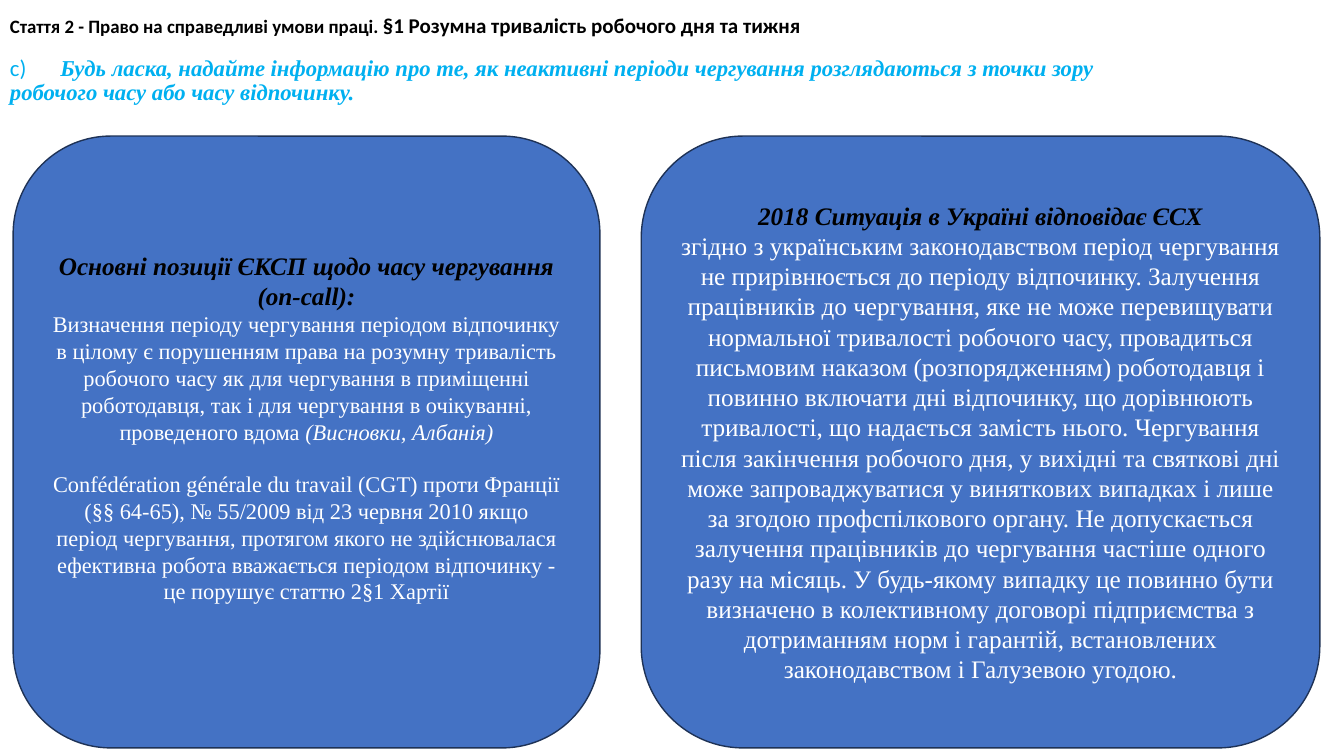
from dataclasses import dataclass

from pptx import Presentation
from pptx import util as u
from pptx.dml.color import RGBColor
from pptx.enum import shapes, text


@dataclass(frozen=True)
class Theme:
    sans: str = "Calibri"
    serif: str = "Times New Roman"
    ink: str = "000000"
    paper: str = "FFFFFF"
    accent: str = "00B0F0"
    card: str = "4472C4"
    card_edge: str = "1E3256"
    article: float = 13.5
    clause: float = 15
    question: float = 16.2
    heading: float = 18
    body: float = 16


@dataclass(frozen=True)
class Area:
    """Shares of the slide's width and height, in percent."""
    left: float
    top: float
    width: float
    height: float


@dataclass(frozen=True)
class Span:
    text: str
    size: float
    color: str
    font: str
    bold: bool = False
    italic: bool = False


@dataclass(frozen=True)
class Para:
    spans: tuple[Span, ...]
    space_before: float = 0


@dataclass(frozen=True)
class Headline:
    area: Area
    spans: tuple[Span, ...]
    line_spacing: float
    inset_top: float


@dataclass(frozen=True)
class Card:
    area: Area
    paras: tuple[Para, ...]
    inset_bottom: float = 0.05


THEME = Theme()
SLIDE_WIDTH, SLIDE_HEIGHT = u.Inches(13.33), u.Inches(7.5)
CARD_TOP, CARD_HEIGHT = 18, 80.93


def heading(words: str) -> Para:
    return Para((Span(words, THEME.heading, THEME.ink, THEME.serif, True, True),))


def body(words: str, size: float = THEME.body, italic: bool = False) -> Span:
    return Span(words, size, THEME.paper, THEME.serif, italic=italic)


HEADLINES = (
    Headline(Area(0, 7.47, 86.27, 8.53), (
        Span("c)\t", THEME.question, THEME.accent, THEME.sans),
        Span("Будь ласка, надайте інформацію про те, як неактивні періоди чергування "
             "розглядаються з точки зору робочого часу або часу відпочинку.",
             THEME.question, THEME.accent, THEME.serif, True, True),
    ), line_spacing=0.9, inset_top=0),
    Headline(Area(0, 0, 71.94, 8.53), (
        Span("Стаття 2 - Право на справедливі умови праці. ",
             THEME.article, THEME.ink, THEME.sans, True),
        Span("§1 Розумна тривалість робочого дня та тижня",
             THEME.clause, THEME.ink, THEME.sans, True),
    ), line_spacing=0.7, inset_top=0.19),
)

CARDS = (
    Card(Area(0.98, CARD_TOP, 43.66, CARD_HEIGHT), (
        heading("Основні позиції ЄКСП щодо часу чергування (on-call):"),
        Para((
            body("Визначення періоду чергування періодом відпочинку в цілому є "
                 "порушенням права на розумну тривалість робочого часу як для "
                 "чергування в приміщенні роботодавця, так і для чергування в "
                 "очікуванні, проведеного вдома "),
            body("(Висновки, Албанія)", italic=True),
        )),
        Para((
            body("Confédération générale du travail (CGT) проти Франції (§§ 64-65), "
                 "№ 55/2009 від 23 червня 2010 якщо період чергування, протягом якого "
                 "не здійснювалася ефективна робота вважається періодом відпочинку - "
                 "це порушує статтю 2§1 Хартії"),
        ), space_before=18),
    ), inset_bottom=0.34),
    Card(Area(47.71, CARD_TOP, 50.49, CARD_HEIGHT), (
        heading("2018 Ситуація в Україні відповідає ЄСХ"),
        Para((
            body("згідно з українським законодавством період чергування не "
                 "прирівнюється до періоду відпочинку. Залучення працівників до "
                 "чергування, яке не може перевищувати нормальної тривалості робочого "
                 "часу, провадиться письмовим наказом (розпорядженням) роботодавця і "
                 "повинно включати дні відпочинку, що дорівнюють тривалості, що "
                 "надається замість нього. Чергування після закінчення робочого дня, у "
                 "вихідні та святкові дні може запроваджуватися у виняткових випадках і "
                 "лише за згодою профспілкового органу. Не допускається залучення "
                 "працівників до чергування частіше одного разу на місяць. У будь-якому "
                 "випадку це повинно бути визначено в колективному договорі підприємства "
                 "з дотриманням норм і гарантій, встановлених законодавством і Галузевою "
                 "угодою.", size=THEME.heading),
        )),
    )),
)


def place(area: Area) -> tuple[int, int, int, int]:
    """Turn percent shares into left, top, width and height."""
    return (int(SLIDE_WIDTH * area.left / 100), int(SLIDE_HEIGHT * area.top / 100),
            int(SLIDE_WIDTH * area.width / 100), int(SLIDE_HEIGHT * area.height / 100))


def add_text(para, words: str, *, size: float, color: str, font: str,
             bold: bool = False, italic: bool = False) -> None:
    span = para.add_run()
    span.text = words
    span.font.size = u.Pt(size)
    span.font.name = font
    span.font.bold = bold
    span.font.italic = italic
    span.font.color.rgb = RGBColor.from_string(color)


def add_spans(para, spans: tuple[Span, ...]) -> None:
    for span in spans:
        add_text(para, span.text, size=span.size, color=span.color, font=span.font,
                 bold=span.bold, italic=span.italic)


def draw_headline(page, headline: Headline) -> None:
    frame = page.shapes.add_textbox(*place(headline.area)).text_frame
    frame.word_wrap = True
    frame.vertical_anchor = text.MSO_ANCHOR.TOP
    frame.margin_top = u.Inches(headline.inset_top)
    para = frame.paragraphs[0]
    para.line_spacing = headline.line_spacing
    add_spans(para, headline.spans)


def draw_card(page, card: Card) -> None:
    box = page.shapes.add_shape(shapes.MSO_SHAPE.ROUNDED_RECTANGLE, *place(card.area))
    box.shadow.inherit = False
    box.fill.solid()
    box.fill.fore_color.rgb = RGBColor.from_string(THEME.card)
    box.line.color.rgb = RGBColor.from_string(THEME.card_edge)
    box.line.width = u.Pt(1)
    frame = box.text_frame
    frame.word_wrap = True
    frame.vertical_anchor = text.MSO_ANCHOR.MIDDLE
    frame.margin_bottom = u.Inches(card.inset_bottom)
    for index, content in enumerate(card.paras):
        para = frame.add_paragraph() if index else frame.paragraphs[0]
        para.alignment = text.PP_ALIGN.CENTER
        para.space_before = u.Pt(content.space_before)
        add_spans(para, content.spans)


def main() -> None:
    deck = Presentation()
    deck.slide_width, deck.slide_height = SLIDE_WIDTH, SLIDE_HEIGHT
    page = deck.slides.add_slide(deck.slide_layouts[6])
    for headline in HEADLINES:
        draw_headline(page, headline)
    for card in CARDS:
        draw_card(page, card)
    deck.save("out.pptx")


if __name__ == "__main__":
    main()
